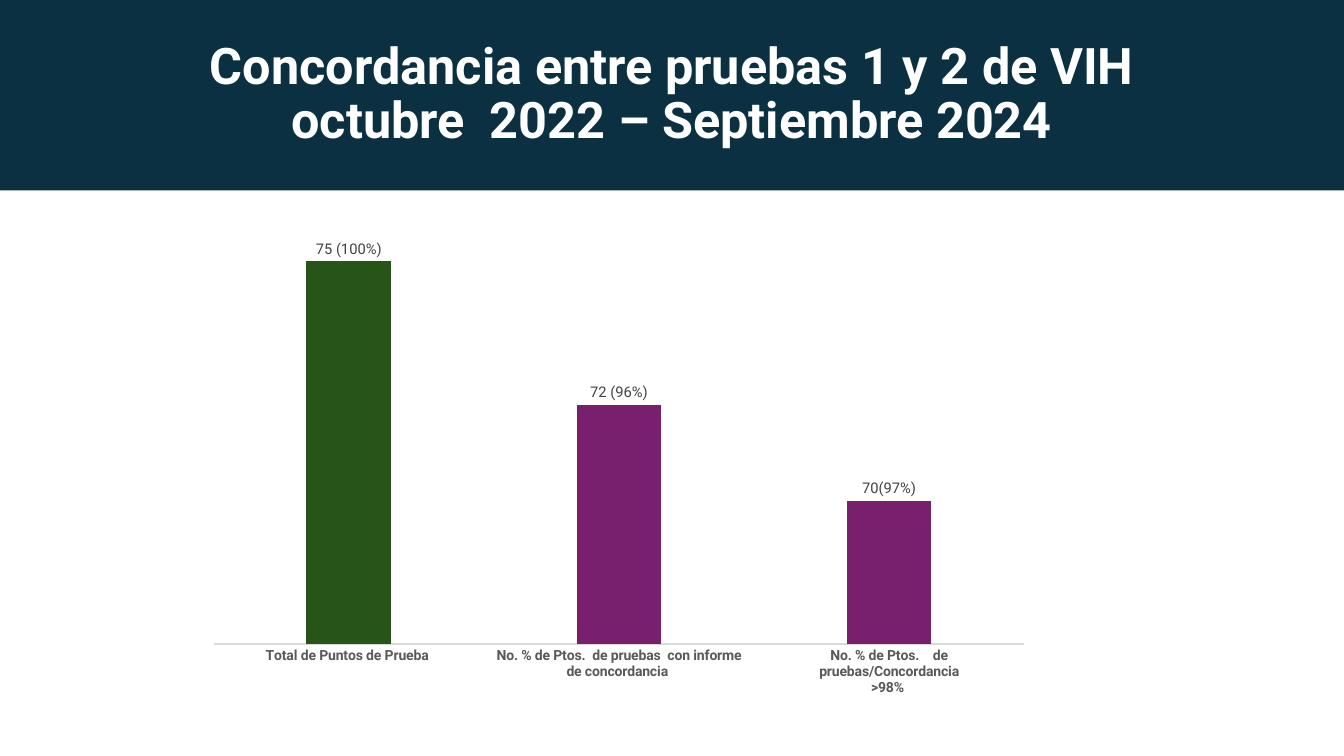
from lxml import etree
from pptx import Presentation
from pptx.chart import data
from pptx.dml import color
from pptx.enum import chart as ch, text
from pptx.oxml import ns
from pptx.util import Inches, Pt

COLORS = {"banner": "0B3041", "title": "FFFFFF", "total": "275417",
          "share": "78206E", "label": "404040", "category": "595959",
          "axis": "D9D9D9", "chart": "000000"}
FONT = "Roboto"
RESULTS = [
    ("Total de Puntos de Prueba ", 75, "75 (100%)", "total"),
    ("No. % de Ptos.  de pruebas  con informe de concordancia ", 72, "72 (96%)", "share"),
    ("No. % de Ptos.    de pruebas/Concordancia >98% ", 70, "70(97%)", "share"),
]


def rgb(name):
    """Return the named colour."""
    return color.RGBColor.from_string(COLORS[name])


def style(font, size, name, bold=False):
    """Apply the slide font in a size, colour and weight."""
    font.name, font.size, font.bold = FONT, Pt(size), bold
    font.color.rgb = rgb(name)


def place_plot(chart, **fractions):
    """Fix the inner plot area by fractions of the chart box."""
    area = chart._chartSpace.find(".//" + ns.qn("c:plotArea"))
    for automatic in area.findall(ns.qn("c:layout")):
        area.remove(automatic)
    layout = etree.Element(ns.qn("c:layout"))
    area.insert(0, layout)
    manual = etree.SubElement(layout, ns.qn("c:manualLayout"))
    settings = {"layoutTarget": "inner", "xMode": "edge", "yMode": "edge", **fractions}
    for tag, value in settings.items():
        etree.SubElement(manual, ns.qn("c:" + tag)).set("val", str(value))


def add_banner(slide, left, top, width, height):
    """Fill the title placeholder as a banner in the given box."""
    banner = slide.shapes.title
    banner.left, banner.top = Inches(left), Inches(top)
    banner.width, banner.height = Inches(width), Inches(height)
    banner.fill.solid()
    banner.fill.fore_color.rgb = rgb("banner")
    frame = banner.text_frame
    frame.text = "Concordancia entre pruebas 1 y 2 de VIH\voctubre  2022 – Septiembre 2024"
    frame.word_wrap = True
    frame.auto_size = text.MSO_AUTO_SIZE.NONE
    frame.vertical_anchor = text.MSO_ANCHOR.MIDDLE
    heading = frame.paragraphs[0]
    heading.alignment = text.PP_ALIGN.CENTER
    heading.line_spacing = 0.9
    style(heading.font, 36, "title", True)


def add_concordance_chart(slide, left, top, width, height):
    """Draw the concordance columns in the given box."""
    results = data.CategoryChartData()
    results.categories = [category for category, *_ in RESULTS]
    results.add_series("Series 1", [value for _, value, *_ in RESULTS])
    chart = slide.shapes.add_chart(
        ch.XL_CHART_TYPE.COLUMN_CLUSTERED, Inches(left), Inches(top),
        Inches(width), Inches(height), results).chart
    style(chart.font, 10, "chart")
    chart.has_legend = chart.has_title = False
    place_plot(chart, x=0.26 / width, y=0.23 / height,
               w=8.04 / width, h=4.27 / height)

    categories = chart.category_axis
    categories.major_tick_mark = ch.XL_TICK_MARK.NONE
    style(categories.tick_labels.font, 10, "category", True)
    categories.format.line.color.rgb = rgb("axis")
    categories.format.line.width = Pt(0.75)
    values = chart.value_axis
    values.visible = values.has_major_gridlines = False

    columns = chart.plots[0]
    columns.gap_width, columns.overlap = 219, -27
    columns.vary_by_categories = False
    series = columns.series[0]
    series.format.fill.solid()
    series.format.fill.fore_color.rgb = rgb("total")
    captions = series.data_labels
    captions.show_value = True
    captions.position = ch.XL_LABEL_POSITION.OUTSIDE_END
    style(captions.font, 10.5, "label", True)
    for index, (_, _, caption, fill) in enumerate(RESULTS):
        if fill != "total":
            point = series.points[index]
            point.format.fill.solid()
            point.format.fill.fore_color.rgb = rgb(fill)
        label = series.points[index].data_label
        label.text_frame.text = caption
        style(label.text_frame.paragraphs[0].runs[0].font, 10.5, "label")
        label.position = ch.XL_LABEL_POSITION.OUTSIDE_END


def main():
    """Build and save the slide."""
    deck = Presentation()
    deck.slide_width, deck.slide_height = Inches(13.33), Inches(7.5)
    slide = deck.slides.add_slide(deck.slide_layouts[5])
    add_banner(slide, 0, 0, 13.33, 1.89)
    add_concordance_chart(slide, 1.86, 1.89, 8.56, 5.4)
    deck.save("out.pptx")


if __name__ == "__main__":
    main()
